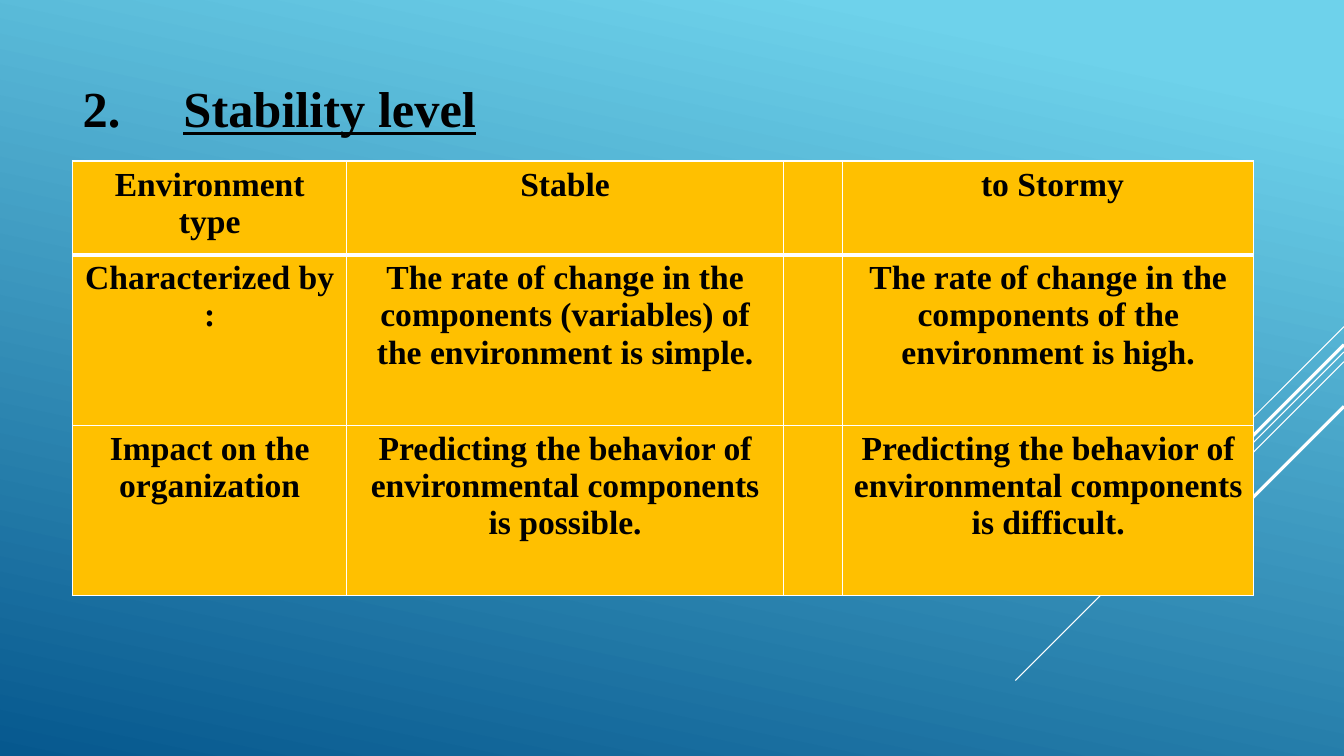
import pptx
import pptx.util
import pptx.dml.color
import pptx.enum.shapes
import pptx.enum.text
import pptx.oxml
import pptx.oxml.ns

RGB = pptx.dml.color.RGBColor
BLACK = RGB(0x00, 0x00, 0x00)
WHITE = RGB(0xFF, 0xFF, 0xFF)
GOLD = RGB(0xFF, 0xC0, 0x00)
SKY = RGB(0x6E, 0xD2, 0xEB)
NAVY = RGB(0x06, 0x58, 0x8E)
FONT = "Times New Roman"

# Top, reach and weight of each 45-degree line: percent of slide height and width, points
RAYS = [
    (43.2, 7.5, 0.75),
    (46.55, 24.45, 0.75),
    (47.85, 15.5, 0.75),
    (45.6, 14.3, 2.25),
    (53.75, 10.4, 2.25),
]
COLS = [20.4, 32.5, 4.4, 30.6]
ROWS = [12.4, 22.55, 22.55]
CELLS = [
    ["Environment type", "Stable", "", " to Stormy"],
    ["Characterized by :",
     "The rate of change in the components (variables) of the environment is simple.",
     "",
     "The rate of change in the components of the environment is high."],
    ["Impact on the organization",
     "Predicting the behavior of environmental components is possible.",
     "",
     "Predicting the behavior of environmental components is difficult."],
]


class Deck:
    """Holds the style and the current slide; lengths are percent of the slide."""

    def __init__(self):
        self.show = pptx.Presentation()
        self.show.slide_width = pptx.util.Inches(13.33)
        self.show.slide_height = pptx.util.Inches(7.5)
        self.slide = self.show.slides.add_slide(self.show.slide_layouts[5])

    def across(self, share):
        return pptx.util.Emu(int(self.show.slide_width * share / 100))

    def down(self, share):
        return pptx.util.Emu(int(self.show.slide_height * share / 100))

    def node(self, parent, tag, **attrs):
        item = pptx.oxml.parse_xml(f"<a:{tag} {pptx.oxml.ns.nsdecls('a')}/>")
        for name, value in attrs.items():
            item.set(name, str(value))
        parent.append(item)
        return item

    def backdrop(self, start, end, angle):
        fill = self.slide.background.fill
        fill.gradient()
        fill.gradient_angle = 360 - angle
        for stop, color, place in zip(fill.gradient_stops, (start, end), (0.1, 1)):
            stop.color.rgb = color
            stop.position = place

    def ray(self, top, reach, width):
        right, y, run = self.across(100), self.down(top), self.across(reach)
        line = self.slide.shapes.add_connector(
            pptx.enum.shapes.MSO_CONNECTOR.STRAIGHT, right, y, right - run, y + run)
        line.line.color.rgb = WHITE
        line.line.width = pptx.util.Pt(width)
        self.node(line._element.spPr, "effectLst")

    def words(self, para, text, size, under=None):
        run = para.add_run()
        run.text = text
        for font in (para.font, run.font):
            font.name, font.size, font.bold = FONT, pptx.util.Pt(size), True
            font.color.rgb = BLACK
        run.font.underline = under

    def title(self, text, number, left, top, width, height):
        box = self.slide.shapes.title
        box.left, box.top = self.across(left), self.down(top)
        box.width, box.height = self.across(width), self.down(height)
        frame = box.text_frame
        frame.word_wrap = True
        frame.auto_size = pptx.enum.text.MSO_AUTO_SIZE.NONE
        frame.vertical_anchor = pptx.enum.text.MSO_ANCHOR.MIDDLE
        para = frame.paragraphs[0]
        para.alignment = pptx.enum.text.PP_ALIGN.LEFT
        props = para._p.get_or_add_pPr()
        indent = pptx.util.Inches(1)
        props.set("marL", str(indent))
        props.set("indent", str(-indent))
        self.node(props, "buFont", typeface=FONT)
        self.node(props, "buAutoNum", type="arabicPeriod", startAt=number)
        self.words(para, text, 36, True)

    def border(self, cell, side, width):
        props = cell._tc.get_or_add_tcPr()
        line = self.node(props, "ln" + side, w=pptx.util.Pt(width))
        paint = self.node(line, "solidFill")
        self.node(paint, "srgbClr", val=WHITE)

    def table(self, cells, left, top, cols, rows):
        frame = self.slide.shapes.add_table(
            len(rows), len(cols), self.across(left), self.down(top),
            self.across(sum(cols)), self.down(sum(rows)))
        grid = frame.table
        for col, share in zip(grid.columns, cols):
            col.width = self.across(share)
        for row, share in zip(grid.rows, rows):
            row.height = self.down(share)
        for r, line in enumerate(cells):
            for c, text in enumerate(line):
                cell = grid.cell(r, c)
                # The rule under the header row is heavier
                for side in "LRTB":
                    heavy = (r, side) in ((0, "B"), (1, "T"))
                    self.border(cell, side, 3 if heavy else 1)
                cell.fill.solid()
                cell.fill.fore_color.rgb = GOLD
                if text:
                    para = cell.text_frame.paragraphs[0]
                    para.alignment = pptx.enum.text.PP_ALIGN.CENTER
                    self.words(para, text, 24)


def main():
    deck = Deck()
    # Background and slanted lines
    deck.backdrop(SKY, NAVY, 102)
    for ray in RAYS:
        deck.ray(*ray)
    # Heading
    deck.title("Stability level", 2, 5.4, 9.5, sum(COLS), 9.45)
    # Comparison table
    deck.table(CELLS, 5.4, 21.3, COLS, ROWS)
    deck.show.save("out.pptx")


if __name__ == "__main__":
    main()
